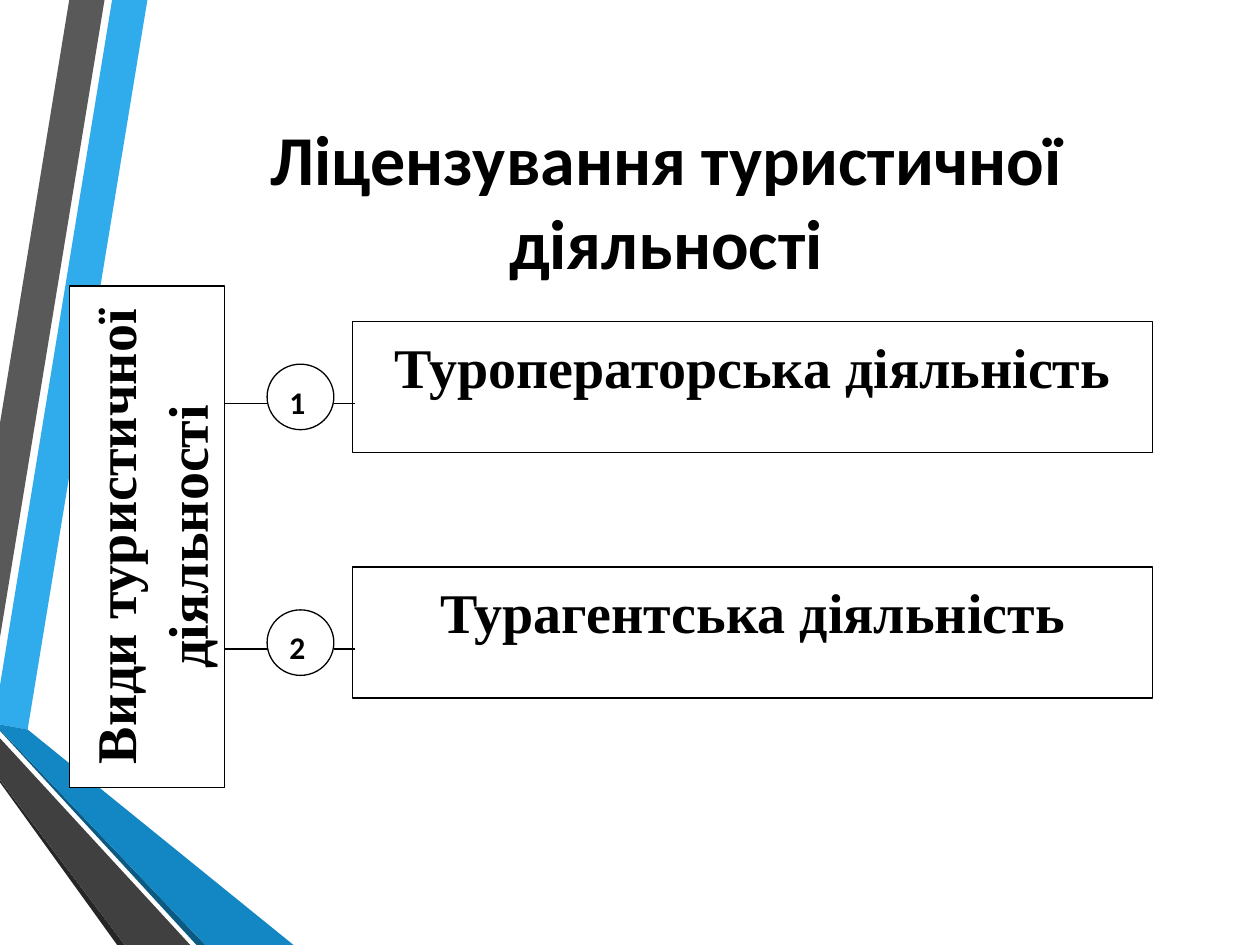
from lxml import etree
from pptx import Presentation
from pptx.dml.color import RGBColor
from pptx.enum import shapes as sh, text as tx
from pptx.oxml.ns import qn
from pptx.util import Inches, Pt

BLACK = RGBColor(0x00, 0x00, 0x00)
WHITE = RGBColor(0xFF, 0xFF, 0xFF)
SKY = RGBColor(0x30, 0xAC, 0xEC)
BLUE = RGBColor(0x12, 0x87, 0xC3)
NAVY = RGBColor(0x0C, 0x5A, 0x82)
GRAY = RGBColor(0x59, 0x59, 0x59)
DARK = RGBColor(0x40, 0x40, 0x40)
COAL = RGBColor(0x26, 0x26, 0x26)

SANS, SERIF = "Calibri", "Times New Roman"
RECT, OVAL = sh.MSO_SHAPE.RECTANGLE, sh.MSO_SHAPE.OVAL
MID, LEFT = tx.PP_ALIGN.CENTER, tx.PP_ALIGN.LEFT

BANDS = [
    (SKY, [(0, 5.44), (0, 5.75), (0.22, 5.79), (1.17, 0), (0.89, 0)]),
    (GRAY, [(0.83, 0), (0.55, 0), (0, 3.36), (0, 5.06)]),
    (COAL, [(0, 6.19), (0, 6.21), (0.93, 7.5), (0.99, 7.5)]),
    (NAVY, [(0, 5.79), (0, 5.8), (1.56, 7.5), (1.63, 7.5)]),
    (BLUE, [(0, 5.79), (1.63, 7.5), (2.33, 7.5), (0.22, 5.79), (0, 5.75)]),
    (DARK, [(0, 6.19), (0.99, 7.5), (1.51, 7.5), (0, 5.86)]),
]
KINDS = ["Туроператорська діяльність", "Турагентська діяльність"]
TOP, STEP = 2.55, 1.95


def add_band(slide, color, points):
    dots = [(Inches(x), Inches(y)) for x, y in points]
    pen = slide.shapes.build_freeform(*dots[0])
    pen.add_line_segments(dots[1:], close=True)
    band = pen.convert_to_shape()
    band.shadow.inherit = False
    band.fill.solid()
    band.fill.fore_color.rgb = color
    band.line.fill.background()


def set_text(frame, words, size, face, align=MID):
    frame.word_wrap = True
    para = frame.paragraphs[0]
    para.text = words
    para.alignment = align
    font = para.font
    font.size, font.name, font.bold = Pt(size), face, True
    font.color.rgb = BLACK
    return para


def add_title(slide, words):
    box = slide.shapes.add_textbox(Inches(1.07), Inches(0.5), Inches(8.43), Inches(2.17))
    box.text_frame.vertical_anchor = tx.MSO_ANCHOR.MIDDLE
    set_text(box.text_frame, words, 40, SANS)


def add_box(slide, kind, place, words, size, face, align=MID):
    box = slide.shapes.add_shape(kind, *map(Inches, place))
    box.shadow.inherit = False
    box.fill.solid()
    box.fill.fore_color.rgb = WHITE
    box.line.color.rgb = BLACK
    box.line.width = Pt(0.75)
    box.text_frame.vertical_anchor = tx.MSO_ANCHOR.TOP
    para = set_text(box.text_frame, words, size, face, align)
    para.line_spacing = 1.07
    return box


def add_link(slide, start, end, y):
    link = slide.shapes.add_connector(
        sh.MSO_CONNECTOR.STRAIGHT, Inches(start), Inches(y), Inches(end), Inches(y))
    link.line.color.rgb = BLACK
    link.line.width = Pt(0.75)
    etree.SubElement(link._element.spPr, qn("a:effectLst"))


def add_row(slide, index, words):
    top = TOP + index * STEP
    add_box(slide, RECT, (2.8, top, 6.35, 1.04), words, 32, SERIF)
    add_box(slide, OVAL, (2.12, top + 0.34, 0.53, 0.52), str(index + 1), 18, SANS, LEFT)
    for start, end in [(1.77, 2.12), (2.65, 2.82)]:
        add_link(slide, start, end, top + 0.65)


def main():
    deck = Presentation()
    deck.slide_width, deck.slide_height = Inches(10), Inches(7.5)
    slide = deck.slides.add_slide(deck.slide_layouts[6])
    for color, points in BANDS:
        add_band(slide, color, points)
    add_title(slide, "Ліцензування туристичної діяльності")
    for index, words in enumerate(KINDS):
        add_row(slide, index, words)
    side = add_box(slide, RECT, (0.55, 2.27, 1.23, 3.98),
                   "Види туристичної діяльності", 32, SERIF)
    side.text_frame._txBody.bodyPr.set("vert", "vert270")
    deck.save("out.pptx")


if __name__ == "__main__":
    main()
